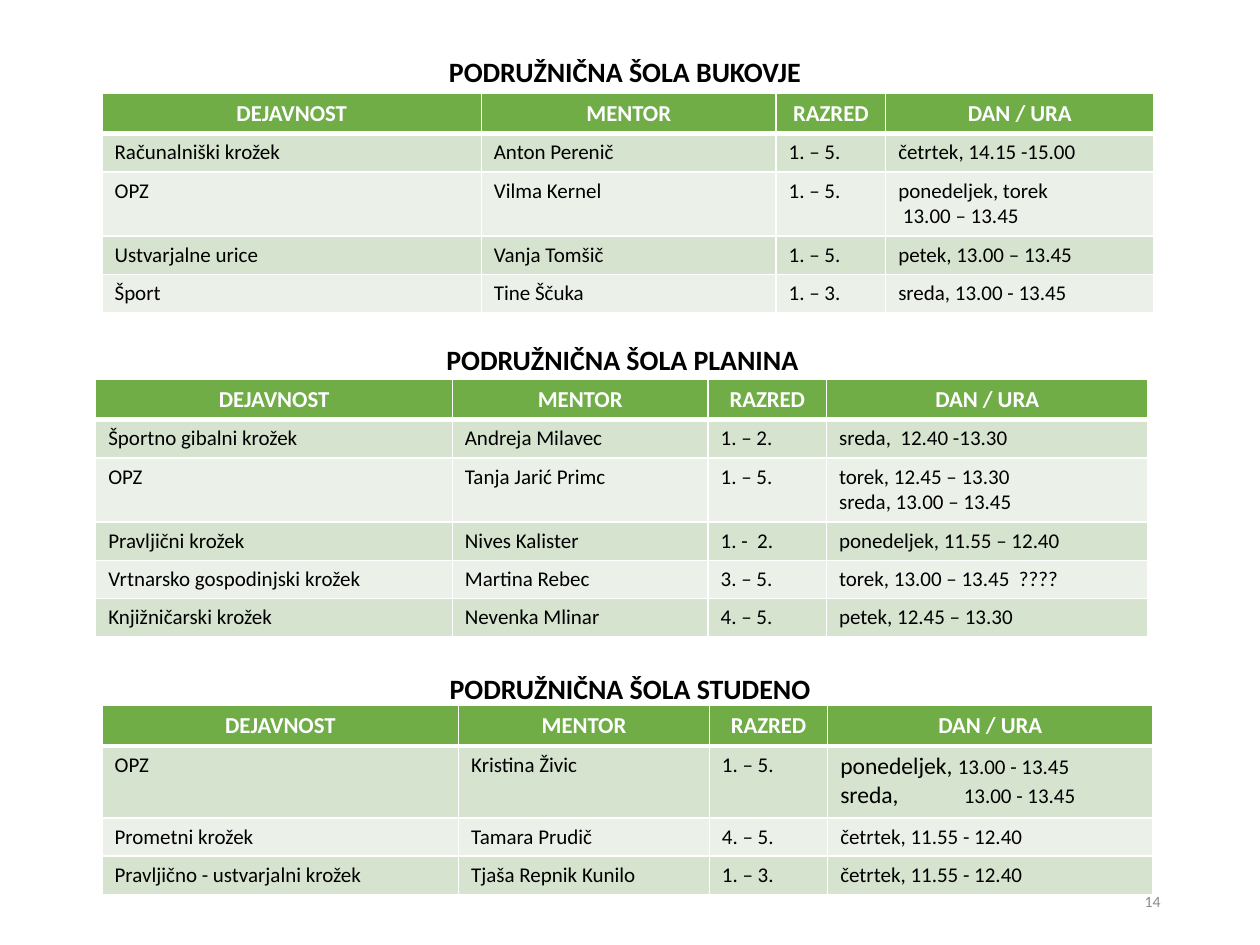
from dataclasses import dataclass
from typing import NamedTuple, Union

from lxml import etree
from pptx import Presentation
from pptx.dml.color import RGBColor
from pptx.enum import text
from pptx.oxml import ns
from pptx.util import Inches, Pt


@dataclass(frozen=True)
class Theme:
    font: str = "Calibri"
    ink: str = "000000"
    white: str = "FFFFFF"
    header: str = "70AD47"
    bands: tuple = ("D5E3CF", "EBF1E9")
    muted: str = "8C8C8C"
    title_size: float = 16
    header_size: float = 13
    body_size: float = 12
    day_size: float = 13.5
    number_size: float = 9


class DayTime(NamedTuple):
    """One timetable line with an emphasised day."""
    day: str
    time: str


Cell = Union[str, tuple]


@dataclass(frozen=True)
class School:
    name: str
    title_at: tuple
    table_at: tuple
    columns: tuple
    rows: list


THEME = Theme()
HEADINGS = ("DEJAVNOST", "MENTOR", "RAZRED", "DAN / URA")
TITLE_W, TITLE_H = 8.62, 0.44
HEADER_H, ROW_H, TWO_LINE_H, DAY_ROW_H = 0.31, 0.3, 0.51, 0.57
TAB_AT = 0.98

SCHOOLS = [
    School("PODRUŽNIČNA ŠOLA BUKOVJE", (0.65, 0.41), (0.81, 0.74),
           (3.01, 2.34, 0.87, 2.13), [
        ("Računalniški krožek", "Anton Perenič", "1. – 5.", "četrtek, 14.15 -15.00"),
        ("OPZ", "Vilma Kernel", "1. – 5.", "ponedeljek, torek\n 13.00 – 13.45"),
        ("Ustvarjalne urice", "Vanja Tomšič", "1. – 5.", "petek, 13.00 – 13.45"),
        ("Šport", "Tine Ščuka", "1. – 3.", "sreda, 13.00 - 13.45"),
    ]),
    School("PODRUŽNIČNA ŠOLA PLANINA", (0.63, 2.7), (0.76, 3.01),
           (2.83, 2.03, 0.94, 2.55), [
        ("Športno gibalni krožek", "Andreja Milavec", "1. – 2.", "sreda,  12.40 -13.30"),
        ("OPZ", "Tanja Jarić Primc", "1. – 5.",
         "torek, 12.45 – 13.30\nsreda, 13.00 – 13.45"),
        ("Pravljični krožek", "Nives Kalister", "1. -  2.", "ponedeljek, 11.55 – 12.40"),
        ("Vrtnarsko gospodinjski krožek", "Martina Rebec", "3. – 5.",
         "torek, 13.00 – 13.45  ????"),
        ("Knjižničarski krožek", "Nevenka Mlinar", "4. – 5.", "petek, 12.45 – 13.30"),
    ]),
    School("PODRUŽNIČNA ŠOLA STUDENO", (0.69, 5.31), (0.81, 5.6),
           (2.83, 1.99, 0.94, 2.58), [
        ("OPZ", "Kristina Živic", "1. – 5.",
         (DayTime("ponedeljek, ", "13.00 - 13.45"), DayTime("sreda,\t", "13.00 - 13.45"))),
        ("Prometni krožek", "Tamara Prudič", "4. – 5.", "četrtek, 11.55 - 12.40"),
        ("Pravljično - ustvarjalni krožek", "Tjaša Repnik Kunilo", "1. – 3.",
         "četrtek, 11.55 - 12.40"),
    ]),
]


def format_run(r, size: float, color: str, bold: bool = False) -> None:
    r.font.name, r.font.size, r.font.bold = THEME.font, Pt(size), bold
    r.font.color.rgb = RGBColor.from_string(color)


def format_text(tf, size: float, color: str, bold: bool, align) -> None:
    for p in tf.paragraphs:
        p.alignment = align
        for r in p.runs:
            format_run(r, size, color, bold)


def set_borders(cell, top: float, bottom: float) -> None:
    tc_pr = cell._tc.get_or_add_tcPr()
    for side, width in (("L", 1), ("R", 1), ("T", top), ("B", bottom)):
        ln = etree.SubElement(tc_pr, ns.qn(f"a:ln{side}"), w=str(Pt(width)))
        fill = etree.SubElement(ln, ns.qn("a:solidFill"))
        etree.SubElement(fill, ns.qn("a:srgbClr"), val=THEME.white)


def write_day_times(tf, lines: tuple) -> None:
    for i, line in enumerate(lines):
        p = tf.add_paragraph() if i else tf.paragraphs[0]
        p.alignment = text.PP_ALIGN.LEFT
        tabs = etree.SubElement(p._p.get_or_add_pPr(), ns.qn("a:tabLst"))
        etree.SubElement(tabs, ns.qn("a:tab"), pos=str(Inches(TAB_AT)), algn="l")
        for words, size in ((line.day, THEME.day_size), (line.time, THEME.body_size)):
            r = p.add_run()
            r.text = words
            format_run(r, size, THEME.ink)


def fill_cell(cell, content: Cell, row: int) -> None:
    is_header = row == 0
    set_borders(cell, 3 if row == 1 else 1, 3 if is_header else 1)
    cell.fill.solid()
    color = THEME.header if is_header else THEME.bands[(row - 1) % 2]
    cell.fill.fore_color.rgb = RGBColor.from_string(color)
    tf = cell.text_frame
    if isinstance(content, tuple):
        write_day_times(tf, content)
        return
    tf.text = content
    if is_header:
        format_text(tf, THEME.header_size, THEME.white, True, text.PP_ALIGN.CENTER)
    else:
        format_text(tf, THEME.body_size, THEME.ink, False, text.PP_ALIGN.LEFT)


def row_height(row: int, schedule: Cell) -> float:
    if row == 0:
        return HEADER_H
    if isinstance(schedule, tuple):
        return DAY_ROW_H
    return TWO_LINE_H if "\n" in schedule else ROW_H


def draw_title(sp, school: School) -> None:
    sp.left, sp.top = map(Inches, school.title_at)
    sp.width, sp.height = Inches(TITLE_W), Inches(TITLE_H)
    tf = sp.text_frame
    tf.text = school.name
    tf.word_wrap = True
    tf.auto_size = text.MSO_AUTO_SIZE.NONE
    tf.vertical_anchor = text.MSO_ANCHOR.TOP
    tf.paragraphs[0].line_spacing = 0.9
    format_text(tf, THEME.title_size, THEME.ink, True, text.PP_ALIGN.CENTER)


def draw_table(s, school: School) -> None:
    rows = [HEADINGS, *school.rows]
    heights = [row_height(i, row[-1]) for i, row in enumerate(rows)]
    left, top = school.table_at
    table = s.shapes.add_table(
        len(rows), len(HEADINGS), Inches(left), Inches(top),
        Inches(sum(school.columns)), Inches(sum(heights))).table
    table.horz_banding = False
    for column, width in zip(table.columns, school.columns):
        column.width = Inches(width)
    for i, (row, height) in enumerate(zip(rows, heights)):
        table.rows[i].height = Inches(height)
        for j, content in enumerate(row):
            fill_cell(table.cell(i, j), content, i)


def draw_page_number(s, number: str) -> None:
    sp = s.shapes.add_textbox(Inches(7.06), Inches(6.95), Inches(2.25), Inches(0.4))
    tf = sp.text_frame
    tf.text = number
    tf.word_wrap = True
    tf.vertical_anchor = text.MSO_ANCHOR.MIDDLE
    format_text(tf, THEME.number_size, THEME.muted, False, text.PP_ALIGN.RIGHT)


def main() -> None:
    prs = Presentation()
    prs.slide_width, prs.slide_height = Inches(10), Inches(7.5)
    s = prs.slides.add_slide(prs.slide_layouts[5])  # Title Only

    # The first school uses the title placeholder, the others text boxes
    for i, school in enumerate(SCHOOLS):
        sp = s.shapes.add_textbox(0, 0, 0, 0) if i else s.shapes.title
        draw_title(sp, school)
        draw_table(s, school)

    draw_page_number(s, "14")
    prs.save("out.pptx")


if __name__ == "__main__":
    main()
